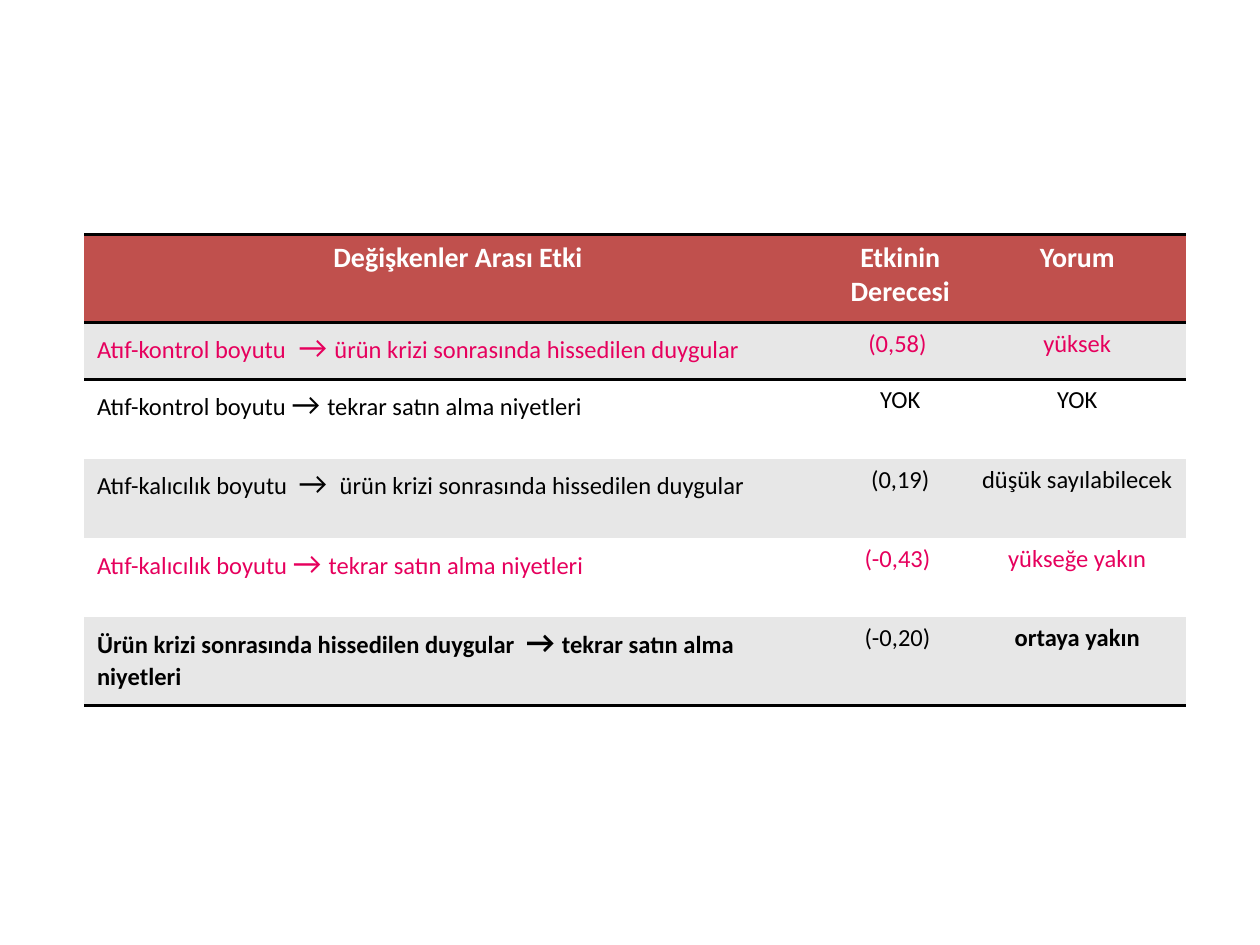
from lxml.etree import SubElement
from pptx import Presentation
from pptx.dml.color import RGBColor
from pptx.enum.text import PP_ALIGN as Align
from pptx.oxml.ns import qn
from pptx.util import Inches, Pt

FONT = "Calibri"
BLACK, WHITE, PINK = "000000", "FFFFFF", "E6005D"
HEADER_FILL, BAND_FILLS = "C0504D", ("E7E7E7", "FFFFFF")
PLAIN_STYLE = "{2D5ABB26-0587-4C30-8999-92F81FD0307C}"
LEFT, TOP = 0.67, 1.86
COLUMNS = (5.93, 1.09, 1.72)
ROWS = (0.7, 0.45, 0.63, 0.63, 0.63, 0.7)

HEADINGS = ("Değişkenler Arası Etki", "Etkinin Derecesi", "Yorum")
EFFECTS = (
    (("Atıf-kontrol boyutu ", " → ", "ürün krizi sonrasında hissedilen duygular"),
     "(0,58) ", "yüksek", PINK, False),
    (("Atıf-kontrol boyutu ", "→ ", "tekrar satın alma niyetleri"),
     "YOK", "YOK", BLACK, False),
    (("Atıf-kalıcılık boyutu  ", "→ ", " ürün krizi sonrasında hissedilen duygular"),
     "(0,19)", "düşük sayılabilecek", BLACK, False),
    (("Atıf-kalıcılık boyutu ", "→ ", "tekrar satın alma niyetleri"),
     "(-0,43) ", "yükseğe yakın", PINK, False),
    (("Ürün krizi sonrasında hissedilen duygular  ", "→ ", "tekrar satın alma niyetleri"),
     "(-0,20) ", "ortaya yakın", BLACK, True),
)


def color(value):
    return RGBColor.from_string(value)


def add_border(cell, side):
    line = SubElement(cell._tc.get_or_add_tcPr(), qn(f"a:{side}"), w=str(Pt(2)))
    fill = SubElement(line, qn("a:solidFill"))
    SubElement(fill, qn("a:srgbClr"), val=BLACK)


def style_cell(cell, fill, sides):
    for side in sides:
        add_border(cell, side)
    cell.fill.solid()
    cell.fill.fore_color.rgb = color(fill)


def write_cell(cell, parts, size, text_color, bold=False, align=Align.CENTER):
    para = cell.text_frame.paragraphs[0]
    para.alignment = align
    font = para.font
    font.name, font.size, font.bold = FONT, Pt(size), bold
    font.color.rgb = color(text_color)
    for part in parts:
        span = para.add_run()
        span.text = part
        span.font.size = Pt(18 if "→" in part else size)
        span.font.name, span.font.bold = FONT, bold
        span.font.color.rgb = color(text_color)


def add_effect_table(page):
    frame = page.shapes.add_table(
        len(ROWS), len(COLUMNS), Inches(LEFT), Inches(TOP),
        Inches(sum(COLUMNS)), Inches(sum(ROWS)))
    table = frame.table
    table._tbl.tblPr.find(qn("a:tableStyleId")).text = PLAIN_STYLE
    for column, width in zip(table.columns, COLUMNS):
        column.width = Inches(width)
    for row, height in zip(table.rows, ROWS):
        row.height = Inches(height)
    return table


def fill_header(table):
    for cell, heading in zip(table.rows[0].cells, HEADINGS):
        style_cell(cell, HEADER_FILL, ("lnT", "lnB"))
        write_cell(cell, (heading,), 16, WHITE, bold=True)


def fill_effects(table):
    for index, (relation, degree, comment, text_color, bold) in enumerate(EFFECTS):
        cells = table.rows[index + 1].cells
        sides = {0: ("lnT",), len(EFFECTS) - 1: ("lnB",)}.get(index, ())
        for cell in cells:
            style_cell(cell, BAND_FILLS[index % 2], sides)
        write_cell(cells[0], relation, 14, text_color, bold, Align.LEFT)
        write_cell(cells[1], (degree,), 14, text_color)
        write_cell(cells[2], (comment,), 14, text_color, bold)


def main():
    deck = Presentation()
    deck.slide_width, deck.slide_height = Inches(10), Inches(7.5)
    page = deck.slides.add_slide(deck.slide_layouts[6])
    table = add_effect_table(page)
    fill_header(table)
    fill_effects(table)
    deck.save("out.pptx")


if __name__ == "__main__":
    main()
